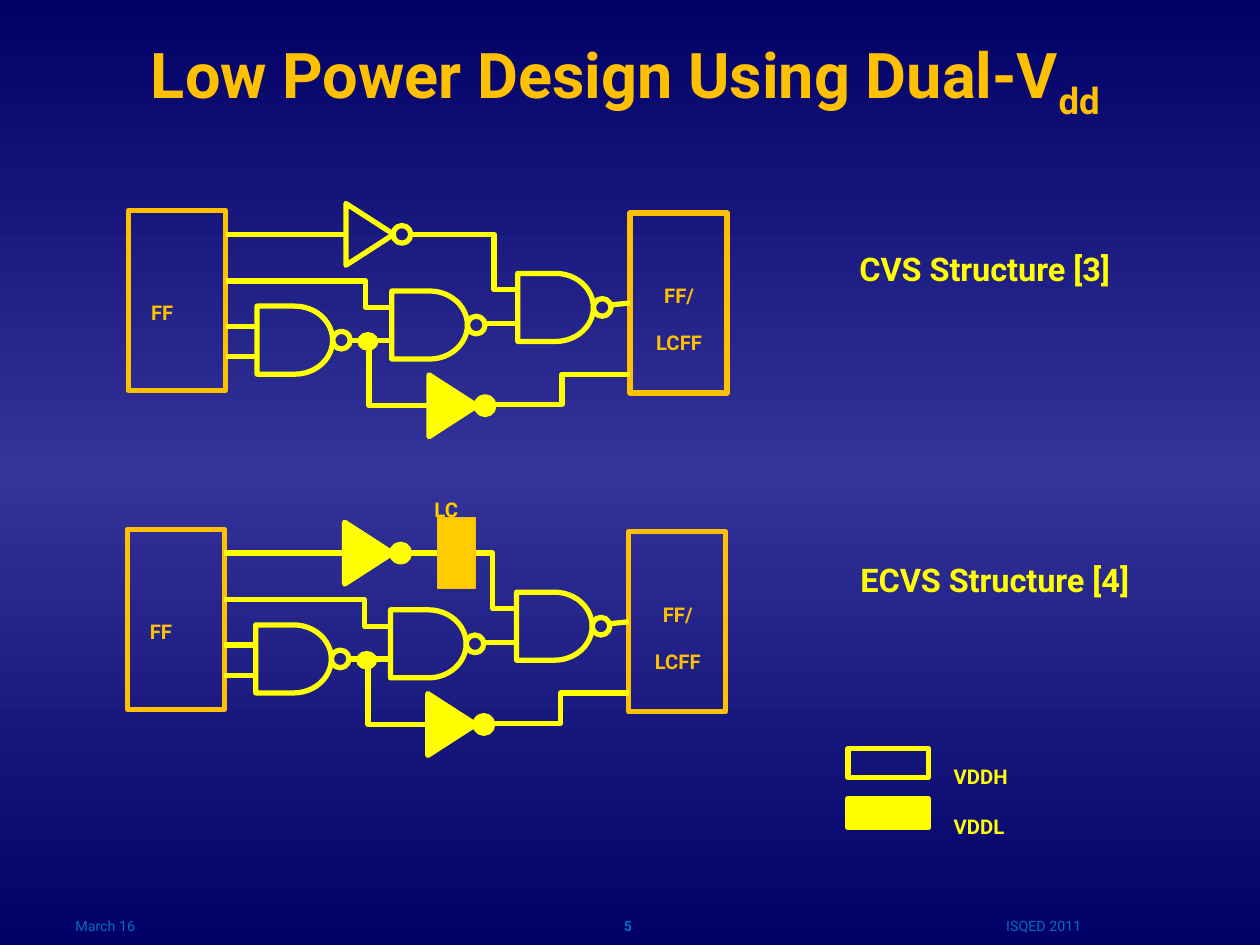
import copy
from dataclasses import dataclass

import lxml.etree
import pptx
import pptx.dml.color
import pptx.enum.shapes
import pptx.enum.text
import pptx.oxml.ns
import pptx.util

SHAPE = pptx.enum.shapes.MSO_SHAPE
CENTER = pptx.enum.text.PP_ALIGN.CENTER
LEFT = pptx.enum.text.PP_ALIGN.LEFT
FONT = "Roboto"
YELLOW, AMBER, GOLD, BLUE = "FFFF00", "FFC000", "FFCC00", "0070C0"
NAVY, INDIGO = "000066", "333399"
CELL = pptx.util.Inches(0.1)  # the slide is a grid of 100 columns by 75 rows


@dataclass
class Box:
    column: float
    row: float
    columns: float
    rows: float


@dataclass
class Gate:
    column: float
    row: float


@dataclass
class Wire:
    start: tuple[float, float]
    end: tuple[float, float]
    bend: float | None = None  # share of the width where an elbow turns


@dataclass
class Label:
    box: Box
    lines: list[str]
    size: int
    color: str
    bold: bool = True
    align: pptx.enum.text.PP_ALIGN = LEFT
    grow: bool = True


@dataclass
class Circuit:
    column: float
    row: float
    low_voltage_top: bool  # the upper inverter runs on VDDL and needs a level converter


NANDS = [Gate(20.4, 24.3), Gate(31.1, 23.1), Gate(41.1, 21.7)]
TOP_INVERTER, BOTTOM_INVERTER = Gate(26.9, 16.7), Gate(33.5, 30.3)
SOURCE_REGISTER, TARGET_REGISTER = Box(10.2, 16.7, 7.7, 14.3), Box(50, 16.9, 7.7, 14.3)
WIRES = [
    Wire((17.9, 18.6), (27.4, 18.6)),
    Wire((17.9, 25.9), (20.4, 25.9)),
    Wire((17.9, 28.3), (20.4, 28.3)),
    Wire((27.7, 27), (31.2, 27)),
    Wire((38.5, 25.7), (41, 25.7)),
    Wire((17.9, 22.3), (31, 24.4), 0.85),
    Wire((32.5, 18.6), (41, 23), 0.79),
    Wire((39.2, 32.1), (50, 29.7), 0.5),
    Wire((34.1, 32.2), (29.3, 27.1), 1),
]
CIRCUITS = [Circuit(0, 0, False), Circuit(-0.1, 25.3, True)]
LABELS = [
    Label(Box(5, 71, 23.3, 5.2), ["March 16"], 14, BLUE, False, LEFT, False),
    Label(Box(67, 71, 31.7, 5.2), ["ISQED 2011"], 14, BLUE, False, CENTER, False),
    Label(Box(38.2, 71, 23.3, 5.2), ["5"], 14, BLUE, True, CENTER, False),
    Label(Box(64.1, 16.3, 28.1, 4.6), ["CVS Structure [3]"], 32, YELLOW, align=CENTER),
    Label(Box(64.7, 41, 28.5, 4.6), ["ECVS Structure [4]"], 32, YELLOW, align=CENTER),
]


def cells(count: float) -> int:
    return round(count * CELL)


def rgb(color: str) -> pptx.dml.color.RGBColor:
    return pptx.dml.color.RGBColor.from_string(color)


def moved(box: Box, circuit: Circuit) -> Box:
    return Box(box.column + circuit.column, box.row + circuit.row, box.columns, box.rows)


def draw_shape(shapes, kind, box: Box, color: str, fill: str | None = None, width: float = 3):
    shape = shapes.add_shape(kind, cells(box.column), cells(box.row), cells(box.columns), cells(box.rows))
    shape.shadow.inherit = False
    if fill:
        shape.fill.solid()
        shape.fill.fore_color.rgb = rgb(fill)
    else:
        shape.fill.background()
    shape.line.color.rgb = rgb(color)
    shape.line.width = pptx.util.Pt(width)
    return shape


def add_run(paragraph, text: str, size: int, color: str, bold: bool, lowered: bool) -> None:
    run = paragraph.add_run()
    run.text = text
    run.font.name = FONT
    run.font.size = pptx.util.Pt(size)
    run.font.bold = bold
    run.font.color.rgb = rgb(color)
    if lowered:
        run.font._element.set("baseline", "-25000")


def add_text_box(shapes, box: Box):
    shape = shapes.add_textbox(cells(box.column), cells(box.row), cells(box.columns), cells(box.rows))
    shape.text_frame.word_wrap = True
    return shape.text_frame


def draw_label(shapes, label: Label) -> None:
    frame = add_text_box(shapes, label.box)
    if label.grow:
        frame.auto_size = pptx.enum.text.MSO_AUTO_SIZE.SHAPE_TO_FIT_TEXT
    for index, line in enumerate(label.lines):
        paragraph = frame.add_paragraph() if index else frame.paragraphs[0]
        paragraph.alignment = label.align
        add_run(paragraph, line, label.size, label.color, label.bold, True)


def draw_wire(shapes, wire: Wire, circuit: Circuit):
    """Draw a straight wire, or an elbow; a bend of 1 makes a single corner."""
    kinds = pptx.enum.shapes.MSO_CONNECTOR
    kind = kinds.STRAIGHT if wire.bend is None else kinds.ELBOW
    points = [cells(value + shift) for point in (wire.start, wire.end)
              for value, shift in zip(point, (circuit.column, circuit.row))]
    connector = shapes.add_connector(kind, *points)
    connector.line.color.rgb = rgb(YELLOW)
    connector.line.width = pptx.util.Pt(3)
    qn = pptx.oxml.ns.qn
    properties = connector._element.spPr
    lxml.etree.SubElement(properties, qn("a:effectLst"))
    geometry = properties.find(qn("a:prstGeom"))
    if wire.bend == 1:
        geometry.set("prst", "bentConnector2")
    elif wire.bend is not None:
        lxml.etree.SubElement(geometry.find(qn("a:avLst")), qn("a:gd"),
                              name="adj1", fmla=f"val {round(wire.bend * 100000)}")
    return connector


def draw_bubble(shapes, column: float, row: float, fill: str | None = None) -> None:
    draw_shape(shapes, SHAPE.OVAL, Box(column, row, 1.4, 1.4), YELLOW, fill)


def draw_nand(shapes, gate: Gate, circuit: Circuit) -> None:
    body = moved(Box(gate.column, gate.row, 6, 5.4), circuit)
    draw_shape(shapes, SHAPE.FLOWCHART_DELAY, body, YELLOW)
    draw_bubble(shapes, body.column + body.columns, body.row + 2)


def draw_inverter(shapes, gate: Gate, circuit: Circuit, fill: str | None) -> None:
    body = moved(Box(gate.column, gate.row, 4.9, 3.8), circuit)
    draw_shape(shapes, SHAPE.ISOSCELES_TRIANGLE, body, YELLOW, fill).rotation = 90
    draw_bubble(shapes, body.column + 4.3, body.row + 1.2, fill)


def draw_circuit(slide, circuit: Circuit) -> None:
    shapes = slide.shapes.add_group_shape().shapes
    draw_label(shapes, Label(moved(Box(11, 21.5, 5.8, 4.4), circuit), ["FF"], 20, AMBER))
    draw_shape(shapes, SHAPE.RECTANGLE, moved(SOURCE_REGISTER, circuit), AMBER)
    target = draw_shape(shapes, SHAPE.RECTANGLE, moved(TARGET_REGISTER, circuit), AMBER)
    for gate in NANDS:
        draw_nand(shapes, gate, circuit)
    draw_inverter(shapes, TOP_INVERTER, circuit, YELLOW if circuit.low_voltage_top else None)
    draw_inverter(shapes, BOTTOM_INVERTER, circuit, YELLOW)
    for wire in WIRES:
        draw_wire(shapes, wire, circuit)
    draw_wire(shapes, Wire((48.5, 24.2), (50, 24.1)), circuit).end_connect(target, 1)
    junction = moved(Box(28.5, 26.5, 1.4, 1.2), circuit)
    draw_shape(shapes, SHAPE.FLOWCHART_CONNECTOR, junction, YELLOW, YELLOW, 2)
    output = moved(Box(49.2, 20.1, 9.4, 7.7), circuit)
    draw_label(shapes, Label(output, ["FF/", "LCFF"], 20, AMBER, align=CENTER))
    if circuit.low_voltage_top:
        draw_label(shapes, Label(moved(Box(33.6, 11.8, 6.7, 4.4), circuit), ["LC"], 20, GOLD))
        converter = moved(Box(34.8, 15.8, 3, 5.6), circuit)
        draw_shape(shapes, SHAPE.RECTANGLE, converter, AMBER, GOLD, 0.75)


def draw_legend(slide) -> None:
    shapes = slide.shapes.add_group_shape().shapes
    for index, (name, fill) in enumerate([("VDDH", None), ("VDDL", YELLOW)]):
        row = 59.4 + 4 * index
        draw_shape(shapes, SHAPE.RECTANGLE, Box(67.3, row, 6.4, 2.3), YELLOW, fill)
        draw_label(shapes, Label(Box(74.7, row - 1.1, 11.3, 4.4), [name], 20, YELLOW))


def draw_title(slide) -> None:
    frame = add_text_box(slide.shapes, Box(5, 0, 90, 12.5))
    frame.vertical_anchor = pptx.enum.text.MSO_ANCHOR.MIDDLE
    paragraph = frame.paragraphs[0]
    paragraph.alignment = CENTER
    add_run(paragraph, "Low Power Design Using Dual-V", 36, AMBER, True, False)
    add_run(paragraph, "dd ", 36, AMBER, True, True)


def paint_background(slide) -> None:
    fill = slide.background.fill
    fill.gradient()
    fill.gradient_angle = 90
    last = list(slide._element.iter(pptx.oxml.ns.qn("a:gs")))[-1]
    last.addnext(copy.deepcopy(last))
    for stop, position, color in zip(fill.gradient_stops, (0, 0.5, 1), (NAVY, INDIGO, NAVY)):
        stop.position = position
        stop.color.rgb = rgb(color)


def main() -> None:
    presentation = pptx.Presentation()
    presentation.slide_width, presentation.slide_height = cells(100), cells(75)
    slide = presentation.slides.add_slide(presentation.slide_layouts[6])
    paint_background(slide)
    draw_title(slide)
    for label in LABELS:
        draw_label(slide.shapes, label)
    for circuit in CIRCUITS:
        draw_circuit(slide, circuit)
    draw_legend(slide)
    presentation.save("out.pptx")


if __name__ == "__main__":
    main()
